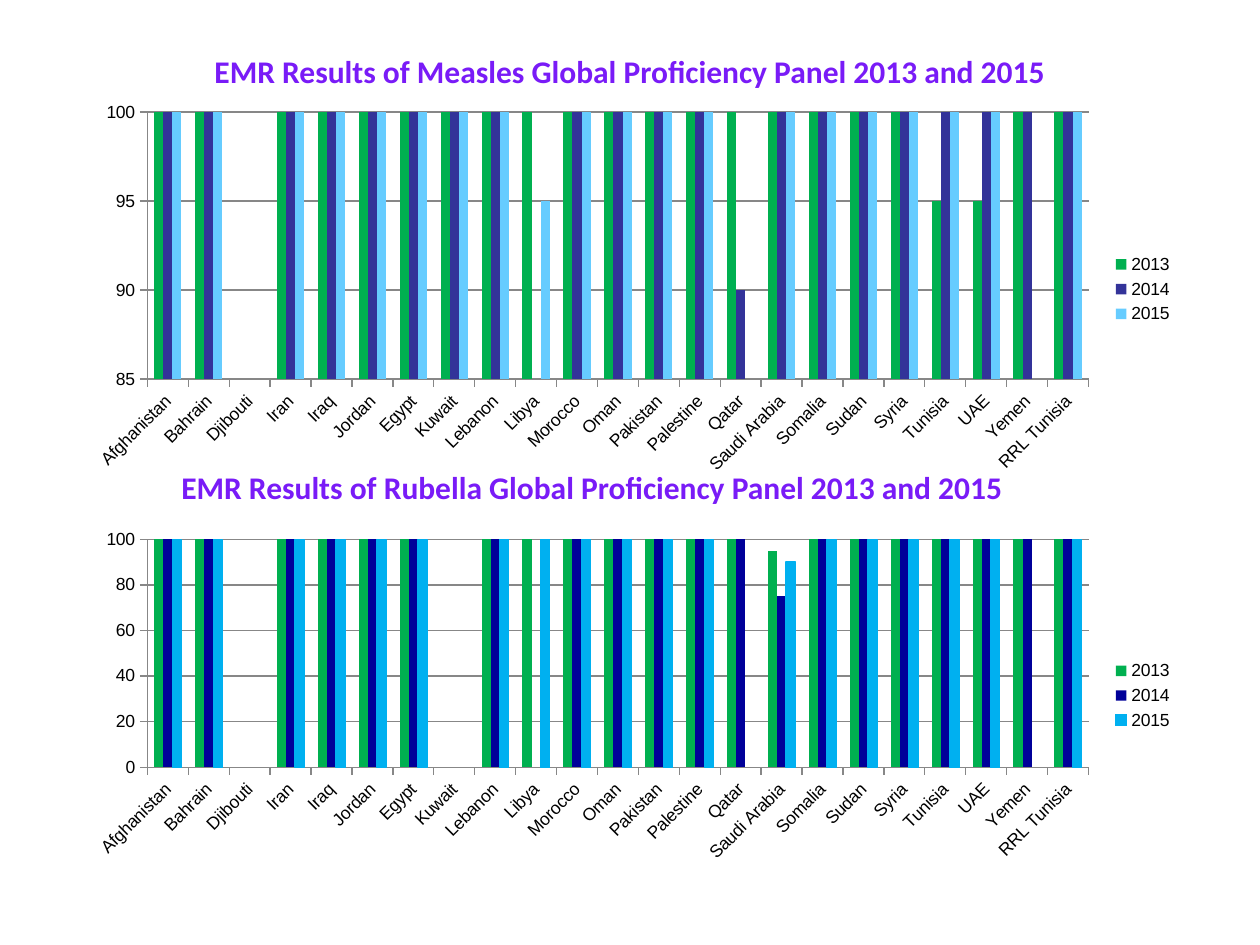
from lxml import etree
from pptx import Presentation
from pptx.chart.data import CategoryChartData
from pptx.dml.color import RGBColor
from pptx.enum.chart import XL_CHART_TYPE as ChartType, XL_LEGEND_POSITION as LegendPos, XL_TICK_MARK as Tick
from pptx.enum.text import MSO_ANCHOR as Anchor, PP_ALIGN as Align
from pptx.oxml.ns import qn
from pptx.util import Inches, Pt

COUNTRIES = [
    "Afghanistan", "Bahrain", "Djibouti", "Iran", "Iraq", "Jordan", "Egypt", "Kuwait",
    "Lebanon", "Libya", "Morocco", "Oman", "Pakistan", "Palestine", "Qatar", "Saudi Arabia",
    "Somalia", "Sudan", "Syria", "Tunisia", "UAE", "Yemen", "RRL Tunisia",
]
FULL_SCORE = 100
AXIS_GREY = "878787"

MEASLES = {
    "title": "EMR Results of Measles Global Proficiency Panel 2013 and 2015",
    "title_box": (0.5, 0.22, 9, 0.69),
    "chart_box": (0.59, 0.76, 8.82, 3.07),
    "plot_box": (0.58, 0.13, 7.47, 2.12),
    "scale": {"minimum_scale": 85, "maximum_scale": 100, "major_unit": 5},
    "years": {
        "2013": ("00B050", {"Djibouti": None, "Tunisia": 95, "UAE": 95}),
        "2014": ("333399", {"Djibouti": None, "Libya": None, "Qatar": 90}),
        "2015": ("66CCFF", {"Djibouti": None, "Libya": 95, "Qatar": None, "Yemen": None}),
    },
    "outlined": (),
}
RUBELLA = {
    "title": "EMR Results of Rubella Global Proficiency Panel 2013 and 2015",
    "title_box": (0.2, 3.52, 9, 0.69),
    "chart_box": (0.59, 4.14, 8.82, 2.76),
    "plot_box": (0.58, 0.14, 7.47, 1.81),
    "scale": {"minimum_scale": 0, "maximum_scale": 100, "major_unit": 20},
    "years": {
        "2013": ("00B050", {"Djibouti": None, "Kuwait": None, "Saudi Arabia": 95}),
        "2014": ("000099", {"Djibouti": None, "Kuwait": None, "Libya": None, "Saudi Arabia": 75}),
        "2015": ("00B0F0", {"Djibouti": None, "Kuwait": None, "Qatar": None,
                            "Saudi Arabia": 90, "Yemen": None}),
    },
    "outlined": ("2015",),
}


def rgb(hex_code):
    """Turn a hex string into a colour."""
    return RGBColor.from_string(hex_code)


def apply_format(target, values):
    """Set each attribute named in a dict of format values."""
    for attribute, value in values.items():
        setattr(target, attribute, value)


def style_line(line, hex_code):
    """Give a line its colour and the common thin width."""
    line.color.rgb = rgb(hex_code)
    line.width = Pt(0.75)


def place_plot(chart, plot_box, chart_box):
    """Fix the inner plot area at a box measured in inches from the chart's corner."""
    plot_area = chart._chartSpace.chart.plotArea
    for old_layout in plot_area.findall(qn("c:layout")):
        plot_area.remove(old_layout)
    width, height = chart_box[2:]
    fractions = [length / side for length, side in zip(plot_box, (width, height) * 2)]
    settings = {"layoutTarget": "inner", "xMode": "edge", "yMode": "edge", **dict(zip("xywh", fractions))}
    layout = etree.Element(qn("c:layout"))
    manual = etree.SubElement(layout, qn("c:manualLayout"))
    for tag, value in settings.items():
        etree.SubElement(manual, qn(f"c:{tag}")).set("val", str(value))
    plot_area.insert(0, layout)


def add_title(slide, box, wording):
    """Write a panel heading centred in its box."""
    frame = slide.shapes.add_textbox(*map(Inches, box)).text_frame
    apply_format(frame, {"word_wrap": True, "vertical_anchor": Anchor.MIDDLE})
    heading = frame.paragraphs[0]
    apply_format(heading, {"text": wording, "alignment": Align.CENTER})
    apply_format(heading.font, {"name": "Calibri", "size": Pt(18), "bold": True})
    heading.font.color.rgb = rgb("791BF7")


def style_axes(chart, scale):
    """Format the country axis and the score axis."""
    countries, scores = chart.category_axis, chart.value_axis
    for axis in (countries, scores):
        apply_format(axis, {"major_tick_mark": Tick.OUTSIDE, "minor_tick_mark": Tick.NONE})
        style_line(axis.format.line, AXIS_GREY)
    apply_format(scores, {**scale, "has_major_gridlines": True})
    style_line(scores.major_gridlines.format.line, AXIS_GREY)
    countries.tick_labels.font.size = Pt(10)
    countries._element.find(qn("c:txPr")).find(qn("a:bodyPr")).set("rot", "-2700000")


def add_scores(slide, box, panel):
    """Chart the yearly scores of each country in its box."""
    scores = CategoryChartData()
    scores.categories = COUNTRIES
    for year, (_, exceptions) in panel["years"].items():
        scores.add_series(year, [exceptions.get(country, FULL_SCORE) for country in COUNTRIES])
    chart = slide.shapes.add_chart(ChartType.COLUMN_CLUSTERED, *map(Inches, box), scores).chart
    apply_format(chart, {"has_title": False, "has_legend": True})
    apply_format(chart.font, {"name": "Arial", "size": Pt(10)})
    chart.font.color.rgb = rgb("000000")
    apply_format(chart.legend, {"position": LegendPos.RIGHT, "include_in_layout": False})
    columns = chart.plots[0]
    apply_format(columns, {"gap_width": 150, "overlap": 0, "vary_by_categories": False})
    for year in columns.series:
        hex_code = panel["years"][year.name][0]
        year.format.fill.solid()
        year.format.fill.fore_color.rgb = rgb(hex_code)
        if year.name in panel["outlined"]:
            style_line(year.format.line, hex_code)
    style_axes(chart, panel["scale"])
    place_plot(chart, panel["plot_box"], box)


def main():
    """Build the slide with both proficiency panels."""
    deck = Presentation()
    apply_format(deck, {"slide_width": Inches(10), "slide_height": Inches(7.5)})
    slide = deck.slides.add_slide(deck.slide_layouts[6])
    for panel in (MEASLES, RUBELLA):
        add_scores(slide, panel["chart_box"], panel)
        add_title(slide, panel["title_box"], panel["title"])
    deck.save("out.pptx")


if __name__ == "__main__":
    main()
